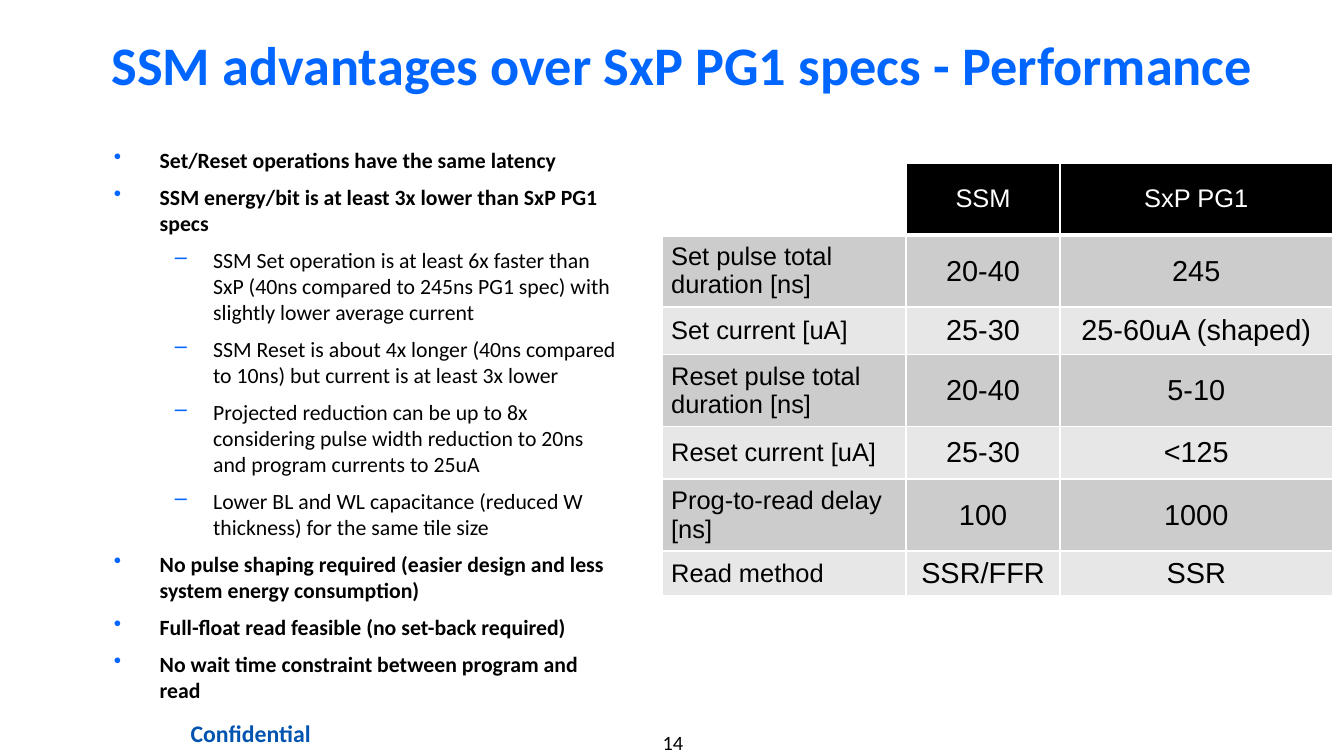
"""Build the SSM performance slide with its bullet list and comparison table."""
from typing import NamedTuple

from lxml import etree
from pptx import Presentation
from pptx.dml.color import RGBColor
from pptx.enum import text
from pptx.oxml import ns
from pptx.util import Pt

COLORS = {
    "title": "0066FF", "label": "0054B0", "ink": "000000", "paper": "FFFFFF",
    "header": "000000", "dark_band": "CCCCCC", "light_band": "E7E7E7",
}


class Bullet(NamedTuple):
    wording: str
    level: int = 0


class BulletStyle(NamedTuple):
    mark: str
    margin: float
    hanging: float
    bold: bool


class Row(NamedTuple):
    height: float
    cells: tuple[str, str, str]


BULLET_STYLES = (BulletStyle("•", 27, 27, True), BulletStyle("–", 58.5, 22.5, False))
BULLETS = (
    Bullet("Set/Reset operations have the same latency"),
    Bullet("SSM energy/bit is at least 3x lower than SxP PG1 specs"),
    Bullet("SSM Set operation is at least 6x faster than SxP (40ns compared to 245ns PG1 spec) "
           "with slightly lower average current", 1),
    Bullet("SSM Reset is about 4x longer (40ns compared to 10ns) but current is at least 3x lower", 1),
    Bullet("Projected reduction can be up to 8x considering pulse width reduction to 20ns "
           "and program currents to 25uA", 1),
    Bullet("Lower BL and WL capacitance (reduced W thickness) for the same tile size", 1),
    Bullet("No pulse shaping required (easier design and less system energy consumption)"),
    Bullet("Full-float read feasible (no set-back required)"),
    Bullet("No wait time constraint between program and read"),
)
COLUMN_WIDTHS = (144, 90.7, 160.6)
ROWS = (
    Row(42.5, ("", "SSM", "SxP PG1")),
    Row(42.5, ("Set pulse total duration [ns]", "20-40", "245")),
    Row(28, ("Set current [uA]", "25-30", "25-60uA (shaped)")),
    Row(42.5, ("Reset pulse total duration [ns]", "20-40", "5-10")),
    Row(31, ("Reset current [uA]", "25-30", "<125")),
    Row(42.5, ("Prog-to-read delay [ns]", "100", "1000")),
    Row(26, ("Read method", "SSR/FFR", "SSR")),
)


def rgb(name: str) -> RGBColor:
    return RGBColor.from_string(COLORS[name])


def style(paragraph, size: float, color: str, bold: bool = False, face: str = "Calibri") -> None:
    font = paragraph.font
    font.name, font.size, font.bold = face, Pt(size), bold
    font.color.rgb = rgb(color)


def add_color(parent, name: str) -> None:
    etree.SubElement(parent, ns.qn("a:srgbClr"), val=COLORS[name])


def add_label(slide, wording: str, frame: tuple, size: float, color: str,
              bold: bool = False, inset: bool = True) -> None:
    box = slide.shapes.add_textbox(*map(Pt, frame)).text_frame
    box.word_wrap = True
    if not inset:
        box.margin_left = box.margin_top = box.margin_right = box.margin_bottom = 0
    para = box.paragraphs[0]
    para.text, para.alignment = wording, text.PP_ALIGN.CENTER
    style(para, size, color, bold)


def add_title(slide, wording: str) -> None:
    title = slide.shapes.title
    title.left, title.top, title.width, title.height = map(Pt, (42, 10, 720.5, 55))
    frame = title.text_frame
    frame.text, frame.word_wrap = wording, True
    frame.auto_size = text.MSO_AUTO_SIZE.NONE
    frame.vertical_anchor = text.MSO_ANCHOR.MIDDLE
    frame.paragraphs[0].alignment = text.PP_ALIGN.CENTER
    style(frame.paragraphs[0], 32, "title", True)


def add_bullets(slide, bullets: tuple[Bullet, ...]) -> None:
    frame = slide.shapes.add_textbox(*map(Pt, (60, 83, 311, 315.5))).text_frame
    frame.word_wrap = True
    for index, bullet in enumerate(bullets):
        para = frame.add_paragraph() if index else frame.paragraphs[0]
        look = BULLET_STYLES[bullet.level]
        para.text, para.level = bullet.wording, bullet.level
        if index:
            para.space_before = Pt(6.4)
        props = para._p.get_or_add_pPr()
        props.set("marL", str(Pt(look.margin)))
        props.set("indent", str(-Pt(look.hanging)))
        add_color(etree.SubElement(props, ns.qn("a:buClr")), "title")
        etree.SubElement(props, ns.qn("a:buChar"), char=look.mark)
        style(para, 12.8, "ink", look.bold)


def add_borders(cell, is_header: bool) -> None:
    props = cell._tc.get_or_add_tcPr()
    for index, side in enumerate(("lnL", "lnR", "lnT", "lnB")):
        width = 3 if is_header and side == "lnB" else 1
        line = etree.Element(ns.qn(f"a:{side}"), w=str(Pt(width)))
        add_color(etree.SubElement(line, ns.qn("a:solidFill")), "paper")
        props.insert(index, line)


def add_specs(slide, rows: tuple[Row, ...]) -> None:
    size = sum(COLUMN_WIDTHS), sum(row.height for row in rows)
    table = slide.shapes.add_table(
        len(rows), len(COLUMN_WIDTHS), Pt(390), Pt(96), *map(Pt, size)).table
    for column, width in zip(table.columns, COLUMN_WIDTHS):
        column.width = Pt(width)
    for row_index, row in enumerate(rows):
        table.rows[row_index].height = Pt(row.height)
        is_header = row_index == 0
        band = "header" if is_header else "dark_band" if row_index % 2 else "light_band"
        for column_index, wording in enumerate(row.cells):
            cell = table.cell(row_index, column_index)
            cell.margin_left = cell.margin_right = Pt(5.5)
            cell.margin_top = cell.margin_bottom = Pt(2.75)
            cell.vertical_anchor = text.MSO_ANCHOR.MIDDLE
            if wording:
                cell.fill.solid()
                cell.fill.fore_color.rgb = rgb(band)
                para = cell.text_frame.paragraphs[0]
                para.text = wording
                para.alignment = text.PP_ALIGN.CENTER if column_index else text.PP_ALIGN.LEFT
                style(para, 15 if is_header or not column_index else 17,
                      "paper" if is_header else "ink", face="Arial")
            else:
                cell.fill.background()
            add_borders(cell, is_header)


def main() -> None:
    deck = Presentation()
    deck.slide_width, deck.slide_height = Pt(792), Pt(445.7)
    slide = deck.slides.add_slide(deck.slide_layouts[5])
    add_title(slide, "SSM advantages over SxP PG1 specs - Performance")
    add_label(slide, "Confidential", (91.5, 420.5, 112.5, 24.5), 14, "label", bold=True)
    add_label(slide, "14", (327, 430.5, 139, 14.5), 12, "ink", inset=False)
    add_bullets(slide, BULLETS)
    add_specs(slide, ROWS)
    deck.save("out.pptx")


if __name__ == "__main__":
    main()
